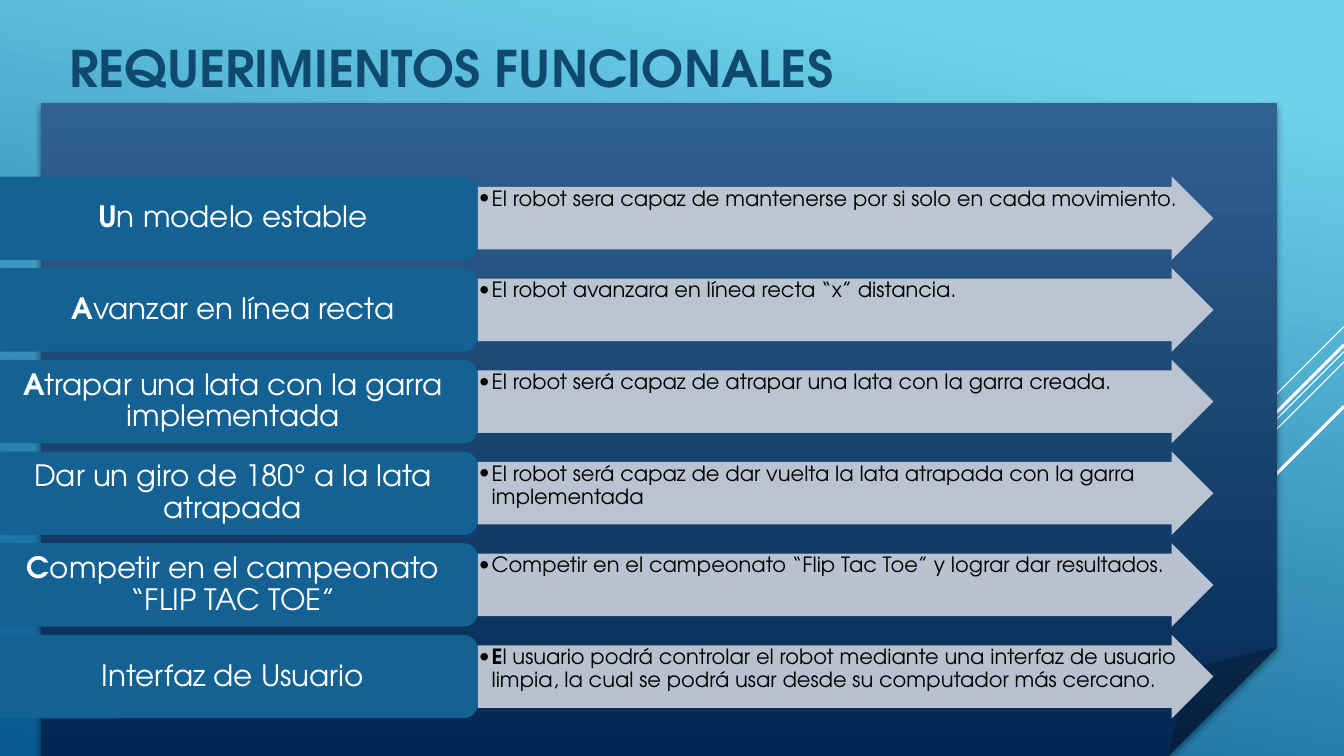
from dataclasses import dataclass

from lxml.etree import SubElement
from pptx import Presentation
from pptx.dml.color import RGBColor
from pptx.enum.shapes import MSO_CONNECTOR, MSO_SHAPE
from pptx.enum.text import MSO_ANCHOR, PP_ALIGN
from pptx.oxml.ns import qn
from pptx.util import Cm, Pt


@dataclass(frozen=True)
class Theme:
    font: str = "TeX Gyre Adventor"
    sky: tuple = ((0.1, "6ED2EB"), (1, "06588E"))
    panel: tuple = ((0, "316190"), (1, "042853"))
    title: str = "0F496F"
    label: str = "146194"
    arrow: str = "CCD2DC"
    white: str = "FFFFFF"
    black: str = "000000"
    big: int = 36
    mid: int = 21
    small: int = 15


theme = Theme()


def write(shape, text, size, color, lead=0, bold=False, align=PP_ALIGN.LEFT,
          anchor=MSO_ANCHOR.TOP, pad=(0.25, 0.13, 0.25, 0.13), space=1.0, bullet=False):
    """Fill a shape with one paragraph; its first `lead` letters are bold."""
    frame = shape.text_frame
    frame.word_wrap = True
    frame.vertical_anchor = anchor
    (frame.margin_left, frame.margin_top,
     frame.margin_right, frame.margin_bottom) = map(Cm, pad)
    para = frame.paragraphs[0]
    para.alignment = align
    para.line_spacing = space
    if bullet:
        props = para._p.get_or_add_pPr()
        props.set("marL", str(Cm(0.32)))
        props.set("indent", str(-Cm(0.32)))
        SubElement(props, qn("a:buFont"), typeface=theme.font)
        SubElement(props, qn("a:buChar"), char="•")
    for part, heavy in ((text[:lead], True), (text[lead:], bold)):
        if part:
            run = para.add_run()
            run.text = part
            run.font.name = theme.font
            run.font.size = Pt(size)
            run.font.bold = heavy
            run.font.color.rgb = RGBColor.from_string(color)


def blend(fill, stops, angle):
    """Apply a two-colour gradient, its angle measured clockwise."""
    fill.gradient()
    fill.gradient_angle = 360 - angle
    for stop, (place, color) in zip(fill.gradient_stops, stops):
        stop.position = place
        stop.color.rgb = RGBColor.from_string(color)


deck = Presentation()
deck.slide_width, deck.slide_height = Cm(33.87), Cm(19.05)
slide = deck.slides.add_slide(deck.slide_layouts[6])
shapes = slide.shapes
blend(slide.background.fill, theme.sky, 102)

# Diagonal rays from the right edge: start height, reach, width
rays = [(8.23, 2.54, 0.75), (8.86, 8.28, 0.75), (9.12, 5.28, 0.75),
        (8.69, 4.85, 2.25), (10.24, 3.53, 2.25)]
for top, reach, width in rays:
    ray = shapes.add_connector(MSO_CONNECTOR.STRAIGHT, Cm(33.87), Cm(top),
                               Cm(33.87 - reach), Cm(top + reach))
    ray.line.color.rgb = RGBColor.from_string(theme.white)
    ray.line.width = Pt(width)
    SubElement(ray._element.spPr, qn("a:effectLst"))

# Folded panel with a soft shadow
panel = shapes.add_shape(MSO_SHAPE.FOLDED_CORNER, Cm(1.04), Cm(2.59), Cm(31.14), Cm(16.46))
blend(panel.fill, theme.panel, 90)
panel.line.fill.background()
panel.shadow.inherit = False
glow = SubElement(panel._element.spPr.find(qn("a:effectLst")), qn("a:outerShdw"),
                  blurRad=str(Pt(4)), dist=str(Pt(3)), dir="5400000", rotWithShape="0")
tint = SubElement(glow, qn("a:srgbClr"), val=theme.black)
SubElement(tint, qn("a:alpha"), val="46000")

title = shapes.add_textbox(Cm(1.5), Cm(0.81), Cm(21.34), Cm(1.8))
write(title, "REQUERIMIENTOS FUNCIONALES", theme.big, theme.title, bold=True)

# Label, its bold letters, detail, its bold letters
rows = [
    ("Un modelo estable", 1,
     "El robot sera capaz de mantenerse por si solo en cada movimiento.", 0),
    ("Avanzar en línea recta", 1,
     "El robot avanzara en línea recta “x” distancia.", 0),
    ("Atrapar una lata con la garra implementada", 1,
     "El robot será capaz de atrapar una lata con la garra creada.", 0),
    ("Dar un giro de 180° a la lata atrapada", 0,
     "El robot será capaz de dar vuelta la lata atrapada con la garra implementada", 0),
    ("Competir en el campeonato “FLIP TAC TOE”", 1,
     "Competir en el campeonato “Flip Tac Toe” y lograr dar resultados.", 0),
    ("Interfaz de Usuario", 0,
     "El usuario podrá controlar el robot mediante una interfaz de usuario limpia, "
     "la cual se podrá usar desde su computador más cercano.", 1),
]
for i, (name, head, detail, lead) in enumerate(rows):
    top = Cm(4.45 + 2.31 * i)
    arrow = shapes.add_shape(MSO_SHAPE.RIGHT_ARROW, Cm(12.04), top, Cm(18.54), Cm(2.1))
    arrow.adjustments[0] = 0.75
    label = shapes.add_shape(MSO_SHAPE.ROUNDED_RECTANGLE, Cm(-0.3), top, Cm(12.34), Cm(2.1))
    for shape, color in ((arrow, theme.arrow), (label, theme.label)):
        shape.fill.solid()
        shape.fill.fore_color.rgb = RGBColor.from_string(color)
        shape.line.fill.background()
        shape.shadow.inherit = False
    shade = arrow._element.spPr.find(qn("a:solidFill")).find(qn("a:srgbClr"))
    SubElement(shade, qn("a:alpha"), val="90000")
    write(arrow, detail, theme.small, theme.black, lead=lead,
          pad=(0.03, 0.03, 0, 0.03), space=0.9, bullet=True)
    write(label, name, theme.mid, theme.white, lead=head, align=PP_ALIGN.CENTER,
          anchor=MSO_ANCHOR.MIDDLE, pad=(0.23, 0.1, 0.23, 0.1), space=0.9)

deck.save("out.pptx")
